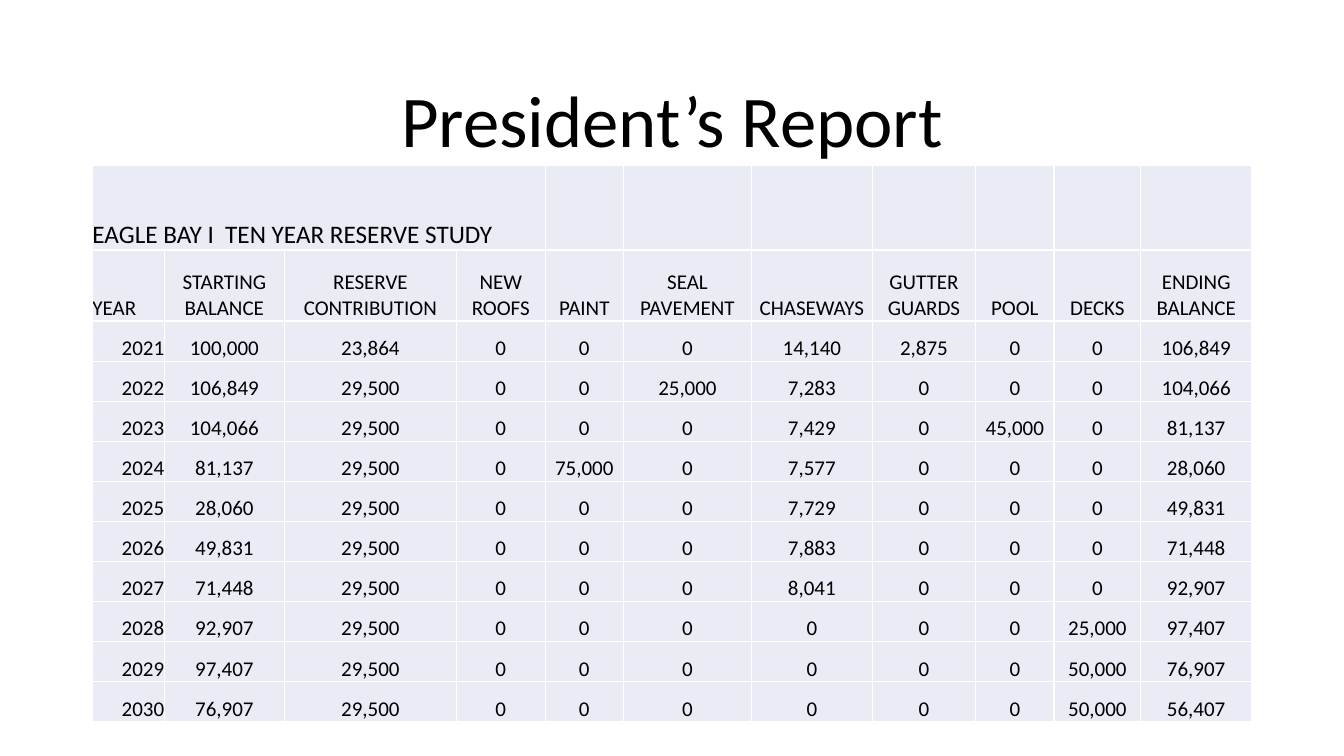
from dataclasses import dataclass, field

from lxml.etree import SubElement
from pptx import Presentation
from pptx.dml.color import RGBColor
from pptx.enum.text import MSO_ANCHOR, PP_ALIGN
from pptx.oxml.ns import qn
from pptx.slide import Slide
from pptx.table import Table, _Cell
from pptx.text.text import TextFrame
from pptx.util import Cm, Pt

COLORS = {"text": "000000", "cell": "E9EBF5", "rule": "FFFFFF"}
FONT = "Calibri"
WORKS = ("NEW ROOFS", "PAINT", "SEAL PAVEMENT", "CHASEWAYS",
         "GUTTER GUARDS", "POOL", "DECKS")
HEADS = ("YEAR", "STARTING BALANCE", "RESERVE CONTRIBUTION", *WORKS,
         "ENDING BALANCE")
WIDTHS = (1.81, 3.03, 4.33, 2.24, 1.97, 3.23, 3.04, 2.61, 1.97, 2.19, 2.79)
HEIGHTS = (2.13, 1.79) + (1.01,) * 10
SPAN = 4  # columns under the table heading


@dataclass
class Year:
    year: int
    costs: dict[str, int] = field(default_factory=dict)
    paid: int = 29500

    def close(self, start: int) -> int:
        return start + self.paid - sum(self.costs.values())

    def row(self, start: int) -> list[str]:
        costs = [self.costs.get(work, 0) for work in WORKS]
        money = [start, self.paid, *costs, self.close(start)]
        return [str(self.year)] + [f"{value:,}" for value in money]


OPENING = 100000
YEARS = (
    Year(2021, {"CHASEWAYS": 14140, "GUTTER GUARDS": 2875}, 23864),
    Year(2022, {"SEAL PAVEMENT": 25000, "CHASEWAYS": 7283}),
    Year(2023, {"CHASEWAYS": 7429, "POOL": 45000}),
    Year(2024, {"PAINT": 75000, "CHASEWAYS": 7577}),
    Year(2025, {"CHASEWAYS": 7729}),
    Year(2026, {"CHASEWAYS": 7883}),
    Year(2027, {"CHASEWAYS": 8041}),
    Year(2028, {"DECKS": 25000}),
    Year(2029, {"DECKS": 50000}),
    Year(2030, {"DECKS": 50000}),
)


def write(frame: TextFrame, text: str, *, size: float = 15,
          align: PP_ALIGN = PP_ALIGN.CENTER, space: float = 1.0) -> None:
    frame.word_wrap = True
    para = frame.paragraphs[0]
    para.alignment = align
    para.line_spacing = space
    run = para.add_run()
    run.text = text
    run.font.name = FONT
    run.font.size = Pt(size)
    run.font.color.rgb = RGBColor.from_string(COLORS["text"])


def style(cell: _Cell) -> None:
    cell.margin_left = cell.margin_right = 0
    cell.margin_top = cell.margin_bottom = 0
    cell.vertical_anchor = MSO_ANCHOR.BOTTOM
    props = cell._tc.get_or_add_tcPr()
    for side in ("lnL", "lnR", "lnT", "lnB"):
        line = SubElement(props, qn(f"a:{side}"), w=str(Pt(1)))
        fill = SubElement(line, qn("a:solidFill"))
        SubElement(fill, qn("a:srgbClr"), val=COLORS["rule"])
    cell.fill.solid()
    cell.fill.fore_color.rgb = RGBColor.from_string(COLORS["cell"])


def add_title(slide: Slide) -> None:
    box = slide.shapes.add_textbox(Cm(2.33), Cm(1.55), Cm(29.21), Cm(3.15))
    box.text_frame.vertical_anchor = MSO_ANCHOR.MIDDLE
    write(box.text_frame, "President’s Report", size=52, space=0.9)


def add_grid(slide: Slide) -> Table:
    grid = slide.shapes.add_table(
        len(HEIGHTS), len(WIDTHS), Cm(2.33), Cm(4.17),
        Cm(sum(WIDTHS)), Cm(sum(HEIGHTS))).table
    grid.first_row = grid.horz_banding = False
    for col, width in zip(grid.columns, WIDTHS):
        col.width = Cm(width)
    for row, height in zip(grid.rows, HEIGHTS):
        row.height = Cm(height)
    grid.cell(0, 0).merge(grid.cell(0, SPAN - 1))
    for cell in grid.iter_cells():
        if not cell.is_spanned:
            style(cell)
    return grid


def fill_grid(grid: Table) -> None:
    # Table heading
    write(grid.cell(0, 0).text_frame, "EAGLE BAY I  TEN YEAR RESERVE STUDY",
          size=18, align=PP_ALIGN.LEFT)

    # Each year opens with the balance the last one closed on
    rows, start = [list(HEADS)], OPENING
    for year in YEARS:
        rows.append(year.row(start))
        start = year.close(start)

    # Column heads and yearly figures
    for r, row in enumerate(rows, 1):
        first = PP_ALIGN.LEFT if r == 1 else PP_ALIGN.RIGHT
        for c, text in enumerate(row):
            write(grid.cell(r, c).text_frame, text,
                  align=PP_ALIGN.CENTER if c else first)


def main() -> None:
    deck = Presentation()
    deck.slide_width, deck.slide_height = Cm(33.87), Cm(19.05)
    slide = deck.slides.add_slide(deck.slide_layouts[6])
    add_title(slide)
    fill_grid(add_grid(slide))
    deck.save("out.pptx")


if __name__ == "__main__":
    main()
